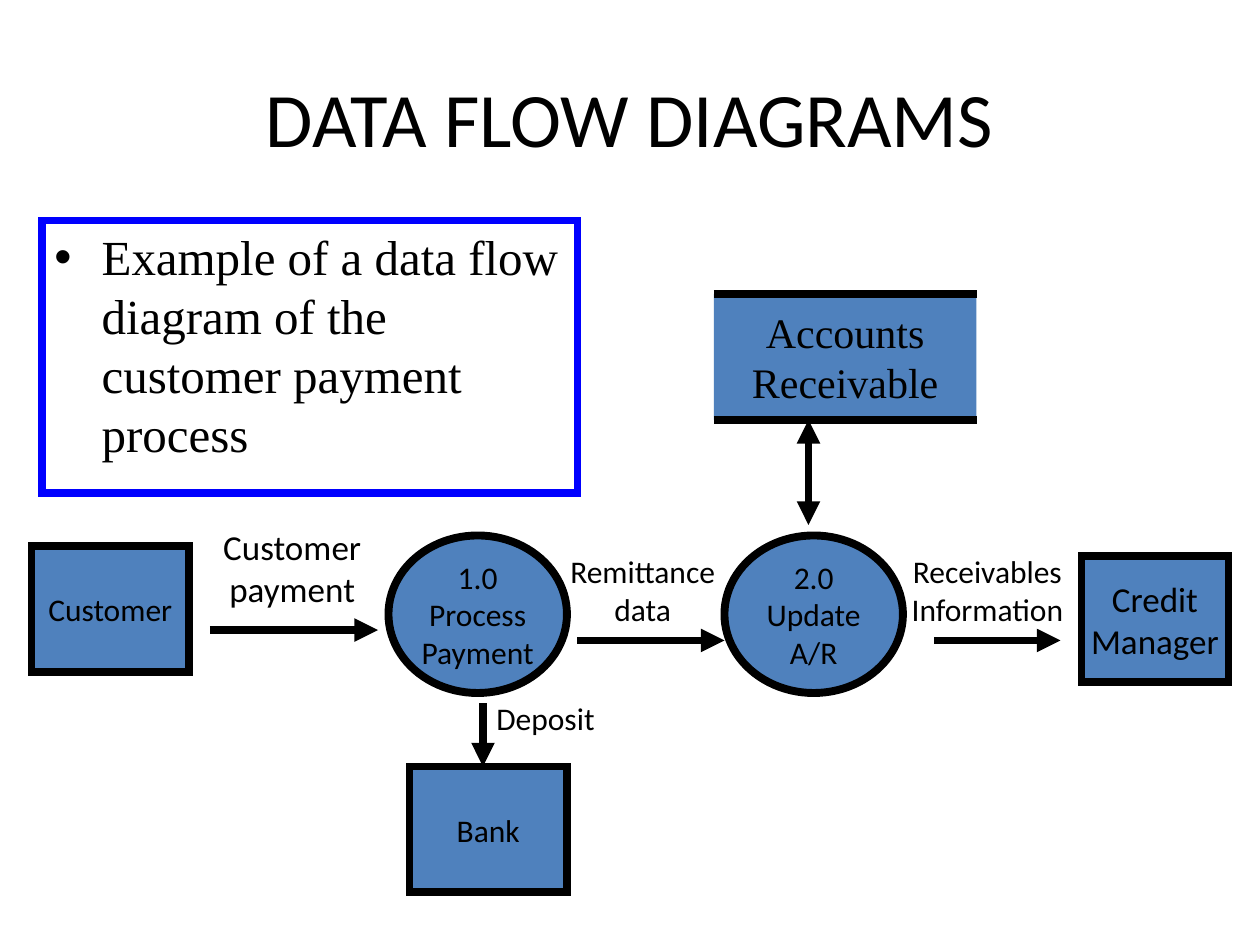
from dataclasses import dataclass

from lxml.etree import SubElement
from pptx import Presentation
from pptx.dml.color import RGBColor
from pptx.enum.shapes import MSO_CONNECTOR, MSO_SHAPE
from pptx.enum.text import MSO_ANCHOR, MSO_AUTO_SIZE, PP_ALIGN
from pptx.oxml.ns import qn
from pptx.util import Pt


@dataclass(frozen=True)
class Theme:
    sans: str = "Calibri"
    serif: str = "Times New Roman"
    bullet: str = "Arial"
    ink: RGBColor = RGBColor(0, 0, 0)
    paper: RGBColor = RGBColor(255, 255, 255)
    node: RGBColor = RGBColor(0x4F, 0x81, 0xBD)
    frame: RGBColor = RGBColor(0, 0, 255)
    stroke: float = 4.5
    title: int = 44
    body: int = 28
    store: int = 24
    large: int = 20
    small: int = 18


T = Theme()


@dataclass(frozen=True)
class Box:
    lines: tuple[str, ...]
    x: float
    y: float
    w: float
    h: float
    size: int = T.small
    font: str = T.sans
    kind: MSO_SHAPE = MSO_SHAPE.RECTANGLE
    line: RGBColor | None = T.ink
    fill: RGBColor = T.node


@dataclass(frozen=True)
class Flow:
    x1: float
    y1: float
    x2: float
    y2: float
    ends: tuple[str, ...] = ("tailEnd",)


NODES = (
    Box(("Customer",), 18, 312, 90, 72),
    Box(("1.0", "Process", "Payment"), 222, 306, 102, 90, kind=MSO_SHAPE.OVAL),
    Box(("2.0", "Update", "A/R"), 414, 306, 102, 90, kind=MSO_SHAPE.OVAL),
    Box(("Credit", "Manager"), 618, 318, 84, 72, T.large),
    Box(("Bank",), 234, 438, 90, 72),
)
STORE = Box(("Accounts", "Receivable"), 408, 168, 150, 72, T.store, T.serif, line=None)
INTRO = Box(("Example of a data flow diagram of the customer payment process",),
            24, 126, 306, 156, T.body, T.serif, line=T.frame, fill=T.paper)
TITLE = Box(("DATA FLOW DIAGRAMS",), 36, 21.6, 648, 90, T.title)
FLOWS = (
    Flow(120, 360, 216, 360),
    Flow(330, 366, 414, 366),
    Flow(534, 366, 606, 366),
    Flow(462, 300, 462, 240, ("headEnd", "tailEnd")),
    Flow(276, 402, 276, 438),
)
LABELS = (
    Box(("Customer", "payment"), 120, 297, 94, 55.5, T.large),
    Box(("Remittance", "data"), 318, 312, 98.5, 51),
    Box(("Receivables", "Information"), 513, 312, 102.5, 51),
    Box(("Deposit",), 276, 396, 71.5, 29),
)


def write(sp, box: Box, align: PP_ALIGN = PP_ALIGN.CENTER,
          anchor: MSO_ANCHOR = MSO_ANCHOR.MIDDLE, wrap: bool = False) -> None:
    tf = sp.text_frame
    tf.word_wrap = wrap
    tf.vertical_anchor = anchor
    for i, text in enumerate(box.lines):
        p = tf.add_paragraph() if i else tf.paragraphs[0]
        p.alignment = align
        r = p.add_run()
        r.text = text
        r.font.name = box.font
        r.font.size = Pt(box.size)
        r.font.color.rgb = T.ink


def add_text(s, box: Box):
    return s.shapes.add_textbox(Pt(box.x), Pt(box.y), Pt(box.w), Pt(box.h))


def add_box(s, box: Box):
    sp = s.shapes.add_shape(box.kind, Pt(box.x), Pt(box.y), Pt(box.w), Pt(box.h))
    sp.shadow.inherit = False
    sp.fill.solid()
    sp.fill.fore_color.rgb = box.fill
    if box.line is None:
        sp.line.fill.background()
    else:
        sp.line.color.rgb = box.line
        sp.line.width = Pt(T.stroke)
        SubElement(sp._element.spPr.get_or_add_ln(), qn("a:miter"), lim="800000")
    return sp


def add_flow(s, flow: Flow) -> None:
    """Draw a straight line with a triangle at each named end."""
    cx = s.shapes.add_connector(MSO_CONNECTOR.STRAIGHT, Pt(flow.x1), Pt(flow.y1),
                                Pt(flow.x2), Pt(flow.y2))
    cx.line.color.rgb = T.ink
    cx.line.width = Pt(T.stroke)
    spPr = cx._element.spPr
    for end in flow.ends:
        SubElement(spPr.get_or_add_ln(), qn(f"a:{end}"), type="triangle")
    SubElement(spPr, qn("a:effectLst"))


def add_store(s, box: Box) -> None:
    """Draw a data store: a filled box ruled only above and below."""
    write(add_box(s, box), box)
    for y in (box.y, box.y + box.h):
        add_flow(s, Flow(box.x, y, box.x + box.w, y, ()))


def add_intro(s, box: Box) -> None:
    sp = add_box(s, box)
    write(sp, box, PP_ALIGN.LEFT, MSO_ANCHOR.TOP, wrap=True)
    p = sp.text_frame.paragraphs[0]
    p.space_before = Pt(0.2 * box.size)
    pPr = p._p.get_or_add_pPr()
    pPr.set("marL", str(Pt(27)))
    pPr.set("indent", str(Pt(-27)))
    SubElement(pPr, qn("a:buFont"), typeface=T.bullet)
    SubElement(pPr, qn("a:buChar"), char="•")


def main() -> None:
    prs = Presentation()
    prs.slide_width, prs.slide_height = Pt(720), Pt(540)
    s = prs.slides.add_slide(prs.slide_layouts[6])
    write(add_text(s, TITLE), TITLE, wrap=True)
    for node in NODES:
        write(add_box(s, node), node)
    add_store(s, STORE)
    for flow in FLOWS:
        add_flow(s, flow)
    for label in LABELS:
        sp = add_text(s, label)
        write(sp, label, anchor=MSO_ANCHOR.TOP)
        sp.text_frame.auto_size = MSO_AUTO_SIZE.SHAPE_TO_FIT_TEXT
    add_intro(s, INTRO)
    prs.save("out.pptx")


if __name__ == "__main__":
    main()
